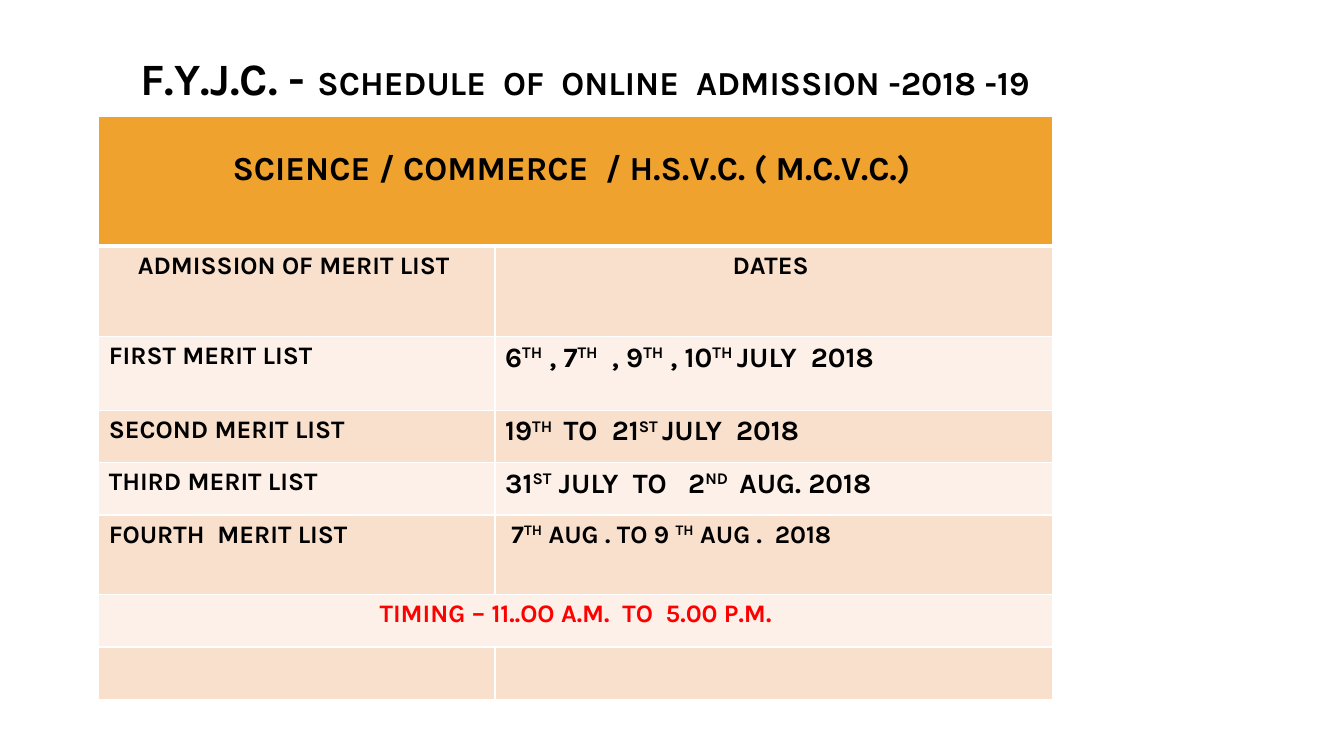
from lxml import etree
from pptx import Presentation
from pptx import util as u
from pptx.dml.color import RGBColor
from pptx.enum import text
from pptx.oxml.ns import qn

FONT = "Karla"
COLORS = {"ink": "000000", "alert": "FF0000", "head": "F0A22E",
          "dark": "F9E0CD", "light": "FCF0E8", "rule": "FFFFFF"}
TITLE = [("F.Y.J.C. - ", 32), ("SCHEDULE  OF  ONLINE  ADMISSION -2018 -19", 24)]
COLUMNS = [3.93, 5.53]
CENTER, LEFT = text.PP_ALIGN.CENTER, text.PP_ALIGN.LEFT

# Text between carets is superscript.
ROWS = [
    (1.29, CENTER, "ink", [("SCIENCE / COMMERCE  / H.S.V.C. ( M.C.V.C.) ", 24)]),
    (0.9, CENTER, "ink", [("ADMISSION OF MERIT LIST ", 18), ("DATES ", 18)]),
    (0.73, LEFT, "ink", [("FIRST MERIT LIST", 18),
                         ("6^TH^ , 7^TH^  , 9^TH^ , 10^TH ^JULY  2018", 20)]),
    (0.52, LEFT, "ink", [("SECOND MERIT LIST", 18),
                         ("19^TH ^ TO  21^ST ^JULY  2018", 20)]),
    (0.52, LEFT, "ink", [("THIRD MERIT LIST", 18),
                         ("31^ST^ JULY  TO   2^ND ^ AUG. 2018", 20)]),
    (0.79, LEFT, "ink", [("FOURTH  MERIT LIST", 18),
                         (" 7^TH^ AUG . TO 9 ^TH^ AUG .  2018", 18)]),
    (0.52, CENTER, "alert", [("TIMING – 11..OO A.M.  TO  5.00 P.M.", 18)]),
    (0.52, LEFT, "ink", [("", 18), ("", 18)]),
]


def rgb(name):
    return RGBColor.from_string(COLORS[name])


def set_font(font, size, color):
    font.name, font.size, font.bold = FONT, u.Pt(size), True
    font.color.rgb = rgb(color)


def set_borders(cell, bottom):
    properties = cell._tc.get_or_add_tcPr()
    for side, width in (("L", 1), ("R", 1), ("T", 1), ("B", bottom)):
        line = etree.SubElement(properties, qn(f"a:ln{side}"), w=str(u.Pt(width)))
        fill = etree.SubElement(line, qn("a:solidFill"))
        etree.SubElement(fill, qn("a:srgbClr"), val=COLORS["rule"])


def write_cell(cell, words, size, align, color):
    para = cell.text_frame.paragraphs[0]
    para.alignment = align
    set_font(para.font, size, color)
    for index, part in enumerate(words.split("^")):
        if part:
            span = para.add_run()
            span.text = part
            if index % 2:
                span._r.get_or_add_rPr().set("baseline", "30000")


def add_title(page):
    box = page.shapes.title
    box.left, box.top = u.Inches(0.39), u.Inches(0.45)
    box.width, box.height = u.Inches(11.74), u.Inches(2.79)
    frame = box.text_frame
    frame.word_wrap = True
    frame.auto_size = text.MSO_AUTO_SIZE.NONE
    frame.vertical_anchor = text.MSO_ANCHOR.TOP
    frame.margin_left = u.Inches(1)
    para = frame.paragraphs[0]
    para.alignment = LEFT
    for words, size in TITLE:
        span = para.add_run()
        span.text = words
        set_font(span.font, size, "ink")


def add_schedule(page):
    height = sum(row[0] for row in ROWS)
    table = page.shapes.add_table(
        len(ROWS), len(COLUMNS), u.Inches(0.98), u.Inches(1.15),
        u.Inches(sum(COLUMNS)), u.Inches(height)).table
    for column, width in zip(table.columns, COLUMNS):
        column.width = u.Inches(width)
    for index, (height, align, color, entries) in enumerate(ROWS):
        table.rows[index].height = u.Inches(height)
        shade = "head" if index == 0 else "dark" if index % 2 else "light"
        for column in range(len(COLUMNS)):
            cell = table.cell(index, column)
            set_borders(cell, 1 if index else 3)
            cell.fill.solid()
            cell.fill.fore_color.rgb = rgb(shade)
        if len(entries) == 1:
            table.cell(index, 0).merge(table.cell(index, 1))
        for column, (words, size) in enumerate(entries):
            write_cell(table.cell(index, column), words, size, align, color)
    table.cell(0, 0).margin_top = u.Inches(0.34)


def main():
    deck = Presentation()
    deck.slide_width, deck.slide_height = u.Inches(13.33), u.Inches(7.5)
    page = deck.slides.add_slide(deck.slide_layouts[5])
    add_title(page)
    add_schedule(page)
    deck.save("out.pptx")


if __name__ == "__main__":
    main()
